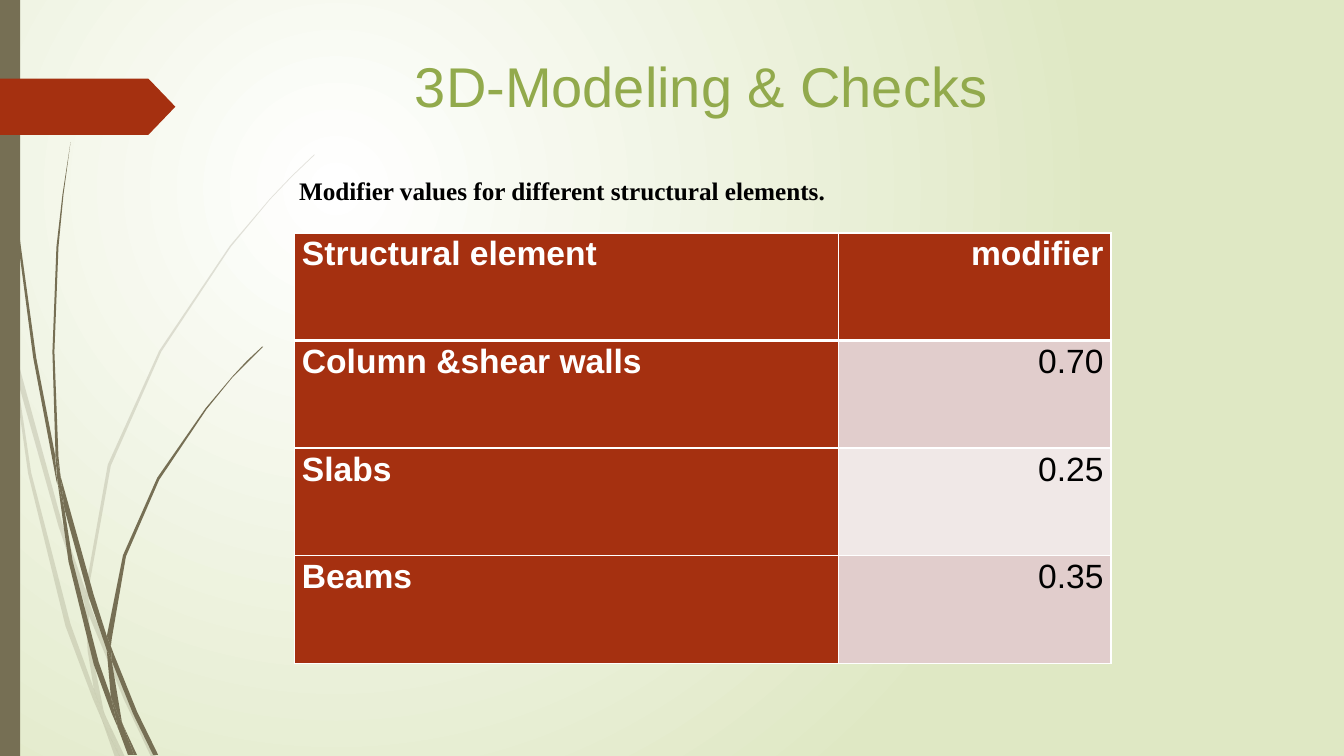
"""Build the slide of stiffness modifiers for structural elements."""
import dataclasses

import pptx
import pptx.dml.color
import pptx.enum.shapes
import pptx.enum.text
import pptx.oxml
import pptx.oxml.ns
import pptx.util

Cm, Pt = pptx.util.Cm, pptx.util.Pt
RGB = pptx.dml.color.RGBColor.from_string
ALIGN = pptx.enum.text.PP_ALIGN
SHAPE = pptx.enum.shapes.MSO_SHAPE
NS = pptx.oxml.ns.nsdecls("a")

TITLE = "3D-Modeling & Checks"
CAPTION = "Modifier values for different structural elements."
ROWS = [
    ("Structural element", "modifier"),
    ("Column &shear walls", "0.70"),
    ("Slabs", "0.25"),
    ("Beams", "0.35"),
]

PALE_BLADES = [
    [(11, 350), (9, 322), (0, 282), (0, 299), (10, 344)],
    [(58, 522), (84, 599), (85, 586), (62, 520), (14, 345), (17, 376)],
    [(92, 607), (88, 596), (88, 610), (123, 694), (150, 751), (155, 751), (127, 692)],
    [(119, 751), (124, 751), (105, 711)],
    [(93, 683), (70, 619), (31, 469), (17, 376), (11, 350), (28, 470), (65, 621),
     (92, 693), (101, 714), (99, 707)],
    [(84, 599), (87, 646), (93, 683), (96, 692), (105, 711), (103, 706), (91, 646),
     (88, 610), (88, 608)],
    [(88, 584), (110, 462), (160, 349), (229, 245), (268, 198), (290, 175), (312, 154),
     (312, 153), (289, 175), (268, 197), (228, 244), (158, 348), (107, 461), (85, 584),
     (85, 586), (88, 596)],
    [(101, 714), (114, 751), (119, 751)],
    [(88, 608), (88, 610), (88, 596), (85, 586), (84, 599)],
    [(96, 692), (93, 683), (99, 707), (101, 714), (119, 751), (105, 711)],
]
DARK_BLADES = [
    [(7, 110), (17, 233), (33, 355), (56, 477), (57, 481), (55, 457), (55, 453),
     (36, 355), (19, 232), (8, 109), (5, 48), (3, 0), (3, 48)],
    [(88, 592), (106, 645), (106, 633), (106, 631), (93, 590), (60, 472), (64, 505)],
    [(113, 649), (110, 641), (111, 656), (132, 708), (152, 749), (157, 749), (136, 706)],
    [(110, 691), (98, 657), (72, 556), (64, 505), (57, 477), (68, 557), (93, 659),
     (111, 708), (117, 722), (116, 717)],
    [(60, 472), (58, 453), (54, 349), (58, 245), (63, 193), (70, 141), (62, 193),
     (56, 245), (52, 349), (55, 449)],
    [(133, 749), (136, 749), (122, 719)],
    [(57, 477), (64, 505), (60, 472), (55, 449), (55, 453)],
    [(111, 633), (125, 552), (158, 476), (205, 406), (231, 374), (246, 359), (261, 344),
     (260, 344), (245, 358), (231, 373), (204, 405), (156, 474), (122, 551), (106, 631),
     (110, 641)],
    [(117, 722), (127, 749), (131, 749)],
    [(106, 645), (110, 691), (116, 706), (122, 719), (121, 716), (111, 656), (109, 651)],
    [(106, 645), (109, 651), (111, 656), (110, 641), (106, 631), (106, 633)],
    [(116, 706), (110, 691), (116, 717), (117, 722), (130, 749), (133, 749), (122, 719)],
]


@dataclasses.dataclass(frozen=True)
class Theme:
    """Colours, fonts and type sizes of the slide."""
    glow: str = "FFFFFF"
    ground: str = "DFE8C4"
    olive: str = "766F54"
    rust: str = "A53010"
    title: str = "92AA4C"
    white: str = "FFFFFF"
    black: str = "000000"
    bands: tuple = ("F0E8E7", "E1CDCC")
    sans: str = "Arial"
    serif: str = "Times New Roman"
    title_pt: int = 40
    table_pt: int = 24
    caption_pt: int = 18


T = Theme()


def paint_background(s):
    """Fill the background with a glow off the centre."""
    fill = s.background.fill
    fill.gradient()
    for stop, color, pos in zip(fill.gradient_stops, (T.glow, T.ground), (0, 1)):
        stop.color.rgb = RGB(color)
        stop.position = pos
    grad = s.background._cSld.find(".//" + pptx.oxml.ns.qn("a:gradFill"))
    lin = grad.find(pptx.oxml.ns.qn("a:lin"))
    grad.replace(lin, pptx.oxml.parse_xml(
        f'<a:path {NS} path="circle">'
        '<a:fillToRect l="50000" t="50000" r="100000" b="100000"/></a:path>'))


def paint(sp, color, alpha=100):
    """Give a shape a plain fill with no line or shadow."""
    sp.shadow.inherit = False
    sp.line.fill.background()
    sp.fill.solid()
    sp.fill.fore_color.rgb = RGB(color)
    if alpha < 100:
        clr = sp._element.spPr.find(".//" + pptx.oxml.ns.qn("a:srgbClr"))
        clr.append(pptx.oxml.parse_xml(f'<a:alpha {NS} val="{alpha * 1000}"/>'))


def add_stalks(s, blades, alpha):
    """Draw a group of blades given in hundredths of an inch."""
    group = s.shapes.add_group_shape()
    for start, *rest in blades:
        builder = group.shapes.build_freeform(*start, scale=Cm(2.54) / 100)
        builder.add_line_segments(rest, close=True)
        paint(builder.convert_to_shape(), T.olive, alpha)


def write(tf, text, size, color, font, bold=False, align=ALIGN.LEFT, after=0, spacing=1.0):
    """Write one formatted paragraph."""
    p = tf.paragraphs[0]
    p.alignment, p.space_after, p.line_spacing = align, Pt(after), spacing
    r = p.add_run()
    r.text = text
    r.font.size, r.font.name, r.font.bold = Pt(size), font, bold
    r.font.color.rgb = RGB(color)


def add_borders(cell, bottom):
    """Rule the four sides of a cell in white."""
    tc_pr = cell._tc.get_or_add_tcPr()
    for side, width in (("L", 1), ("R", 1), ("T", 1), ("B", bottom)):
        tc_pr.append(pptx.oxml.parse_xml(
            f'<a:ln{side} {NS} w="{Pt(width)}"><a:solidFill>'
            f'<a:srgbClr val="{T.white}"/></a:solidFill></a:ln{side}>'))


def add_modifier_table(s):
    """Add the table of elements and their modifiers."""
    widths, height = (13.72, 6.86), 2.71
    table = s.shapes.add_table(len(ROWS), len(widths), Cm(7.42), Cm(5.87),
                               Cm(sum(widths)), Cm(height * len(ROWS))).table
    table.first_row = table.horz_banding = False
    for column, width in zip(table.columns, widths):
        column.width = Cm(width)
    for i, row in enumerate(ROWS):
        table.rows[i].height = Cm(height)
        for j, text in enumerate(row):
            cell = table.cell(i, j)
            heading = i == 0 or j == 0
            cell.margin_left = cell.margin_right = Cm(0.19)
            cell.margin_top = cell.margin_bottom = 0
            add_borders(cell, bottom=3 if i == 0 else 1)
            cell.fill.solid()
            cell.fill.fore_color.rgb = RGB(T.rust if heading else T.bands[i % 2])
            write(cell.text_frame, text, T.table_pt, T.white if heading else T.black, T.sans,
                  heading, ALIGN.RIGHT if j else ALIGN.LEFT, after=6, spacing=1.07)


def main():
    """Compose and save the slide."""
    prs = pptx.Presentation()
    prs.slide_width, prs.slide_height = Cm(33.87), Cm(19.05)
    s = prs.slides.add_slide(prs.slide_layouts[5])
    paint_background(s)
    add_stalks(s, PALE_BLADES, alpha=20)
    add_stalks(s, DARK_BLADES, alpha=100)
    paint(s.shapes.add_shape(SHAPE.RECTANGLE, 0, 0, Cm(0.51), prs.slide_height), T.olive)
    tag = s.shapes.add_shape(SHAPE.PENTAGON, 0, Cm(1.98), Cm(4.42), Cm(1.42))
    tag.adjustments[0] = 0.48
    paint(tag, T.rust)
    add_modifier_table(s)

    title = s.shapes.title
    title.left, title.top, title.width, title.height = Cm(8.38), Cm(1.17), Cm(18.57), Cm(1.96)
    title.text_frame.vertical_anchor = pptx.enum.text.MSO_ANCHOR.TOP
    title.text_frame.auto_size = pptx.enum.text.MSO_AUTO_SIZE.NONE
    write(title.text_frame, TITLE, T.title_pt, T.title, T.sans, align=ALIGN.CENTER)

    caption = s.shapes.add_textbox(Cm(7.21), Cm(4.29), Cm(13.92), Cm(1.45))
    caption.text_frame.word_wrap = False
    write(caption.text_frame, CAPTION, T.caption_pt, T.black, T.serif, True, ALIGN.CENTER, after=6)
    prs.save("out.pptx")


if __name__ == "__main__":
    main()
